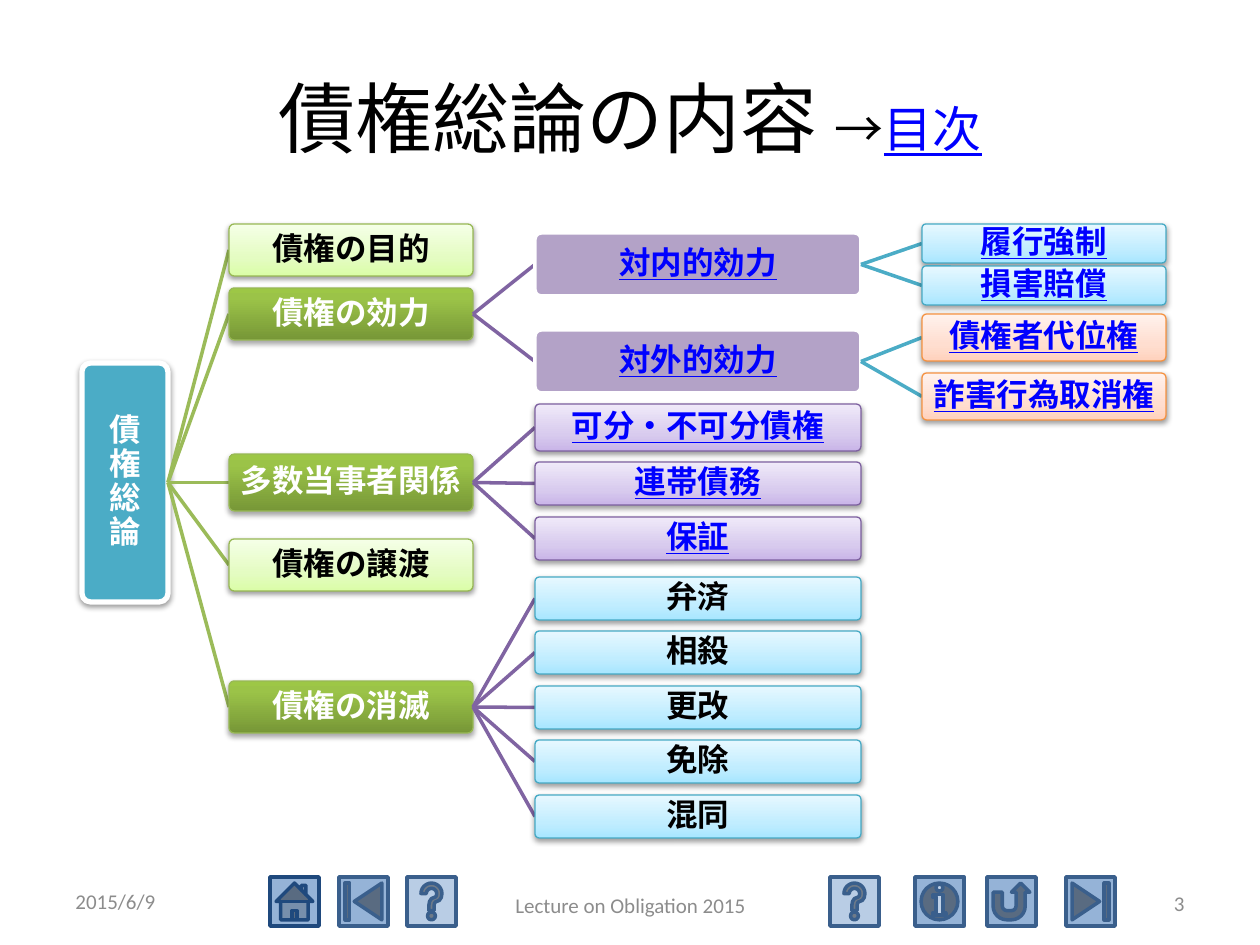
import copy
import pptx
import pptx.util
import pptx.dml.color
import pptx.enum.shapes
import pptx.enum.text
import pptx.oxml
import pptx.oxml.ns

# Content: (text, look, top, height, branches), in px
TREE = ("債\v権\v総\v論", "root", 363, 239, [
    ("債権の目的", "lime", 224, 52, []),
    ("債権の効力", "green", 288, 52, [
        ("対内的効力", "plum", 233, 63, [
            ("履行強制", "sky link", 224, 39, []),
            ("損害賠償", "sky link", 266, 39, [])]),
        ("対外的効力", "plum", 330, 63, [
            ("債権者代位権", "peach", 314, 47, []),
            ("詐害行為取消権", "peach", 373, 47, [])])]),
    ("多数当事者関係", "green", 454, 57, [
        ("可分・不可分債権", "lilac", 404, 47, []),
        ("連帯債務", "lilac", 462, 43, []),
        ("保証", "lilac", 517, 43, [])]),
    ("債権の譲渡", "lime", 539, 52, []),
    ("債権の消滅", "green", 681, 52, [
        ("弁済", "sky", 577, 43, []),
        ("相殺", "sky", 631, 43, []),
        ("更改", "sky", 686, 43, []),
        ("免除", "sky", 740, 43, []),
        ("混同", "sky", 795, 43, [])])])
COLUMNS = [(82, 86), (229, 244), (535, 326), (922, 244)]  # left, width

TITLE = [("債権総論の内容 ", "big", "black"), ("→", "mid", "black"),
         ("目次", "mid", "link")]
FOOT = [("2015/6/9", 63, 876, 294, "LEFT"),
        ("Lecture on Obligation 2015", 431, 880, 399, "CENTER"),
        ("3", 903, 878, 294, "RIGHT")]
BUTTONS = [("BEGINNING", 339, "mist", "steel"), ("END", 1066, "mist", "steel"),
           ("RETURN", 987, "mist", "steel"), ("HOME", 270, "mist", "navy"),
           ("INFORMATION", 915, "mist", "steel"),
           ("HELP", 407, "pale", "steel"), ("HELP", 830, "pale", "steel")]

# Theme; gradient stops run from bottom to top
SKY = [(0, "A7E6FF"), (.35, "C1EDFF"), (1, "E7F8FF")]
THEME = {
    "font": "Calibri",
    "size": {"big": 44, "mid": 28, "box": 18, "foot": 12},
    "color": {"black": "000000", "white": "FFFFFF", "link": "0000FF",
              "gray": "8C8C8C", "mist": "95B3D7", "pale": "B9CDE5",
              "steel": "3A5F8C", "navy": "1F497D"},
    "branch": ["9BBB59", "8064A2", "4BACC6"],
    # look: fill, line, line width, text colour, shadow (opacity, distance)
    "look": {
        "root": ("4BACC6", "FFFFFF", 3, "white", (38, 20000)),
        "lime": ([(0, "DAFDA7"), (.35, "E4FCC2"), (1, "F5FFE7")],
                 "98B955", .75, "black", (38, 20000)),
        "green": ([(0, "779737"), (.8, "9BC348"), (1, "9DC746")],
                  "98B955", .75, "white", (35, 23000)),
        "plum": ("B3A2C7", "FFFFFF", 2, "link", None),
        "lilac": ([(0, "C9B5E8"), (.35, "D8CBEE"), (1, "F0EAF9")],
                  "7D60A0", .75, "link", (38, 20000)),
        "peach": ([(0, "FFD2BD"), (.35, "FFDED0"), (1, "FFF2ED")],
                  "F69240", .75, "link", (38, 20000)),
        "sky": (SKY, "46AAC5", .75, "black", (38, 20000)),
        "sky link": (SKY, "46AAC5", .75, "link", (38, 20000)),
    },
}
Pt = pptx.util.Pt
rgb = pptx.dml.color.RGBColor.from_string
KINDS = pptx.enum.shapes.MSO_SHAPE
ALIGN = pptx.enum.text.PP_ALIGN
MIDDLE = pptx.enum.text.MSO_ANCHOR.MIDDLE


def px(*sizes):
    return [round(size * 914400 / 126) for size in sizes]


def style(run, size, color, bold=False):
    form = {"name": THEME["font"], "size": Pt(THEME["size"][size]),
            "bold": bold, "underline": color == "link"}
    for key, value in form.items():
        setattr(run.font, key, value)
    run.font.color.rgb = rgb(THEME["color"][color])


def frame(shape, inset=None):
    text = shape.text_frame
    text.word_wrap = True
    text.vertical_anchor = MIDDLE
    if inset is not None:
        for side in ("left", "top", "right", "bottom"):
            setattr(text, "margin_" + side, px(inset)[0])
    return text


def paint(shape, fill, line, width):
    shape.shadow.inherit = False
    if isinstance(fill, str):
        shape.fill.solid()
        shape.fill.fore_color.rgb = rgb(fill)
    else:
        shape.fill.gradient()
        shape.fill.gradient_angle = 90
        first = shape._element.spPr.find(".//" + pptx.oxml.ns.qn("a:gs"))
        first.addnext(copy.deepcopy(first))
        for stop, (place, color) in zip(shape.fill.gradient_stops, fill):
            stop.position = place
            stop.color.rgb = rgb(color)
    shape.line.color.rgb = rgb(line)
    shape.line.width = Pt(width)


def shade(shape, alpha, gap):
    space = pptx.oxml.ns.nsdecls("a")
    effect = shape._element.spPr.find(pptx.oxml.ns.qn("a:effectLst"))
    effect.append(pptx.oxml.parse_xml(
        f'<a:outerShdw {space} blurRad="40000" dist="{gap}" dir="5400000" '
        f'rotWithShape="0"><a:srgbClr val="000000">'
        f'<a:alpha val="{alpha * 1000}"/></a:srgbClr></a:outerShdw>'))


def join(shapes, start, end, color):
    line = shapes.add_connector(
        pptx.enum.shapes.MSO_CONNECTOR.STRAIGHT, 0, 0, 0, 0)
    line.begin_connect(start, 3)
    line.end_connect(end, 1)
    line.line.color.rgb = rgb(color)
    line.line.width = Pt(2)
    pptx.oxml.ns.qn("a:effectLst")
    line._element.spPr.append(pptx.oxml.parse_xml(
        f'<a:effectLst {pptx.oxml.ns.nsdecls("a")}/>'))
    end._element.addprevious(line._element)  # line lies under its end box


def grow(shapes, node, depth=0, stem=None):
    words, look, top, height, twigs = node
    left, width = COLUMNS[depth]
    fill, line, weight, color, shadow = THEME["look"][look]
    box = shapes.add_shape(KINDS.ROUNDED_RECTANGLE,
                           *px(left, top, width, height))
    box.adjustments[0] = .1
    paint(box, fill, line, weight)
    if shadow:
        shade(box, *shadow)
    para = frame(box, 1).paragraphs[0]
    para.text = words
    para.alignment = ALIGN.CENTER
    para.line_spacing = .9
    for run in para.runs:
        style(run, "box", color, True)
    if stem is not None:
        join(shapes, stem, box, THEME["branch"][depth - 1])
    for twig in twigs:
        grow(shapes, twig, depth + 1, box)


def main():
    deck = pptx.Presentation()
    deck.slide_width, deck.slide_height = px(1260, 945)
    slide = deck.slides.add_slide(deck.slide_layouts[5])
    shapes = slide.shapes

    # Navigation buttons
    for kind, left, fill, line in BUTTONS:
        button = shapes.add_shape(getattr(KINDS, "ACTION_BUTTON_" + kind),
                                  *px(left, 877, 49, 49))
        paint(button, THEME["color"][fill], THEME["color"][line], 2)

    # Title
    title = shapes.title
    title.left, title.top, title.width, title.height = px(63, 38, 1134, 157)
    para = frame(title).paragraphs[0]
    para.alignment = ALIGN.CENTER
    for words, size, color in TITLE:
        run = para.add_run()
        run.text = words
        style(run, size, color)

    # Footer
    for words, left, top, width, align in FOOT:
        note = shapes.add_textbox(*px(left, top, width, 50))
        para = frame(note).paragraphs[0]
        para.text = words
        para.alignment = getattr(ALIGN, align)
        style(para.runs[0], "foot", "gray")

    # Tree diagram
    grow(shapes, TREE)
    deck.save("out.pptx")


if __name__ == "__main__":
    main()
